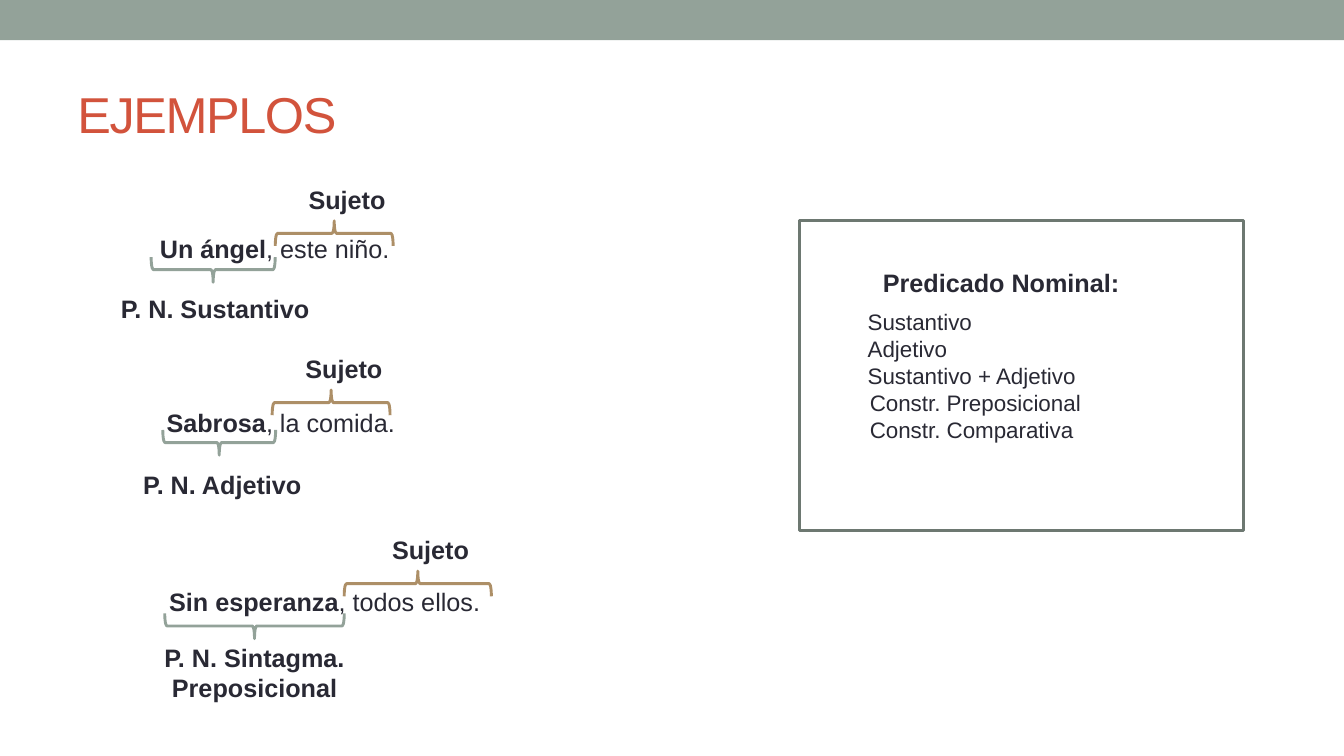
from pptx import Presentation
from pptx.dml.color import RGBColor
from pptx.enum.shapes import MSO_SHAPE
from pptx.enum.text import MSO_ANCHOR, MSO_AUTO_SIZE, PP_ALIGN
from pptx.util import Pt

RECT, BRACE = MSO_SHAPE.RECTANGLE, MSO_SHAPE.LEFT_BRACE
LEFT, CENTER = PP_ALIGN.LEFT, PP_ALIGN.CENTER
MIDDLE = MSO_ANCHOR.MIDDLE
GROW = MSO_AUTO_SIZE.SHAPE_TO_FIT_TEXT

# Content: boxes are (left, top, width), braces are (centre x, centre y, span)
TITLE = "EJEMPLOS"
SUBJECT = "Sujeto"
EXAMPLES = [
    {"predicate": "Un ángel", "subject": ", este niño.", "sentence": (79.2, 163.4, 234),
     "over": (238.7, 166.7, 84.2), "under": (152.3, 192.6, 88.6),
     "kind": "P. N. Sustantivo", "label": (79.2, 205.9, 174.2), "align": LEFT},
    {"predicate": "Sabrosa", "subject": ", la comida.", "sentence": (83.5, 287.3, 234),
     "over": (236.5, 287.6, 84.2), "under": (156.6, 316.1, 80.6),
     "kind": "P. N. Adjetivo", "label": (81.4, 331.9, 154.8), "align": CENTER},
    {"predicate": "Sin esperanza", "subject": ", todos ellos.", "sentence": (92.2, 415.4, 279.4),
     "over": (298.4, 416.9, 105.1), "under": (181.8, 447.1, 128.2),
     "kind": "P. N. Sintagma. Preposicional", "label": (104.4, 455, 154.8), "align": CENTER},
]
PANEL_TITLE = "Predicado Nominal:"
PANEL_LISTS = [
    ((612.7, 216.7, 225.4), ["Sustantivo", "Adjetivo", "Sustantivo + Adjetivo"]),
    ((614.2, 274.3, 223.2), ["Constr. Preposicional", "Constr. Comparativa"]),
]

THEME = {
    "font": "Arial", "title_size": 36, "body": 18, "list": 16, "line": 2.08,
    "text": RGBColor(0x29, 0x29, 0x34), "title": RGBColor(0xD2, 0x53, 0x3C),
    "sage": RGBColor(0x93, 0xA2, 0x99), "tan": RGBColor(0xAD, 0x8F, 0x67),
    "frame": RGBColor(0x6D, 0x78, 0x71),
}
BRACE_DEPTH = 18
SUBJECT_WIDTH, SUBJECT_SHIFT, SUBJECT_RISE = 87.2, 9.2, 38.6
LINE_BOX = 28.8

prs = Presentation()
prs.slide_width, prs.slide_height = Pt(960), Pt(540)
s = prs.slides.add_slide(prs.slide_layouts[6])


def add_text(box, lines, size=THEME["body"], color=THEME["text"], align=LEFT, height=LINE_BOX):
    """Each line is a list of (text, bold) runs."""
    left, top, width = box
    sp = s.shapes.add_textbox(Pt(left), Pt(top), Pt(width), Pt(height))
    tf = sp.text_frame
    tf.word_wrap = True
    for i, runs in enumerate(lines):
        p = tf.paragraphs[0] if i == 0 else tf.add_paragraph()
        p.alignment = align
        for text, bold in runs:
            r = p.add_run()
            r.text = text
            r.font.name, r.font.size, r.font.bold = THEME["font"], Pt(size), bold
            r.font.color.rgb = color
    return sp


def add_outline(kind, left, top, width, height, color):
    sp = s.shapes.add_shape(kind, Pt(left), Pt(top), Pt(width), Pt(height))
    sp.shadow.inherit = False
    sp.fill.background()
    sp.line.color.rgb, sp.line.width = color, Pt(THEME["line"])
    return sp


def add_brace(place, rotation, color):
    x, y, span = place
    sp = add_outline(BRACE, x - BRACE_DEPTH / 2, y - span / 2, BRACE_DEPTH, span, color)
    sp.rotation = rotation


# Top band and title
band = s.shapes.add_shape(RECT, 0, 0, prs.slide_width, Pt(28.8))
band.shadow.inherit = False
band.fill.solid()
band.fill.fore_color.rgb = THEME["sage"]
band.line.fill.background()

title = add_text((48.2, 41.8, 864), [[(TITLE, False)]], THEME["title_size"], THEME["title"], height=77.8)
title.text_frame.vertical_anchor = MIDDLE
title.text_frame.paragraphs[0].runs[0].font._element.set("spc", "-100")

# Examples: sentence, braces and their labels
for ex in EXAMPLES:
    add_text(ex["sentence"], [[(ex["predicate"], True), (ex["subject"], False)]], align=CENTER)
    add_brace(ex["over"], 90, THEME["tan"])
    add_brace(ex["under"], 270, THEME["sage"])
    x, y, span = ex["over"]
    subject_box = (x + SUBJECT_SHIFT - SUBJECT_WIDTH / 2, y - SUBJECT_RISE, SUBJECT_WIDTH)
    add_text(subject_box, [[(SUBJECT, True)]], align=CENTER)
    label = add_text(ex["label"], [[(ex["kind"], True)]], align=ex["align"])
    label.text_frame.auto_size = GROW

# Panel of predicate kinds
add_text((623.5, 187.2, 241.9), [[(PANEL_TITLE, True)]])
for box, items in PANEL_LISTS:
    sp = add_text(box, [[(item, False)] for item in items], THEME["list"],
                  height=7.2 + 19.4 * len(items))
    sp.text_frame.auto_size = GROW
add_outline(RECT, 571, 157.7, 317.5, 221, THEME["frame"])

prs.save("out.pptx")
